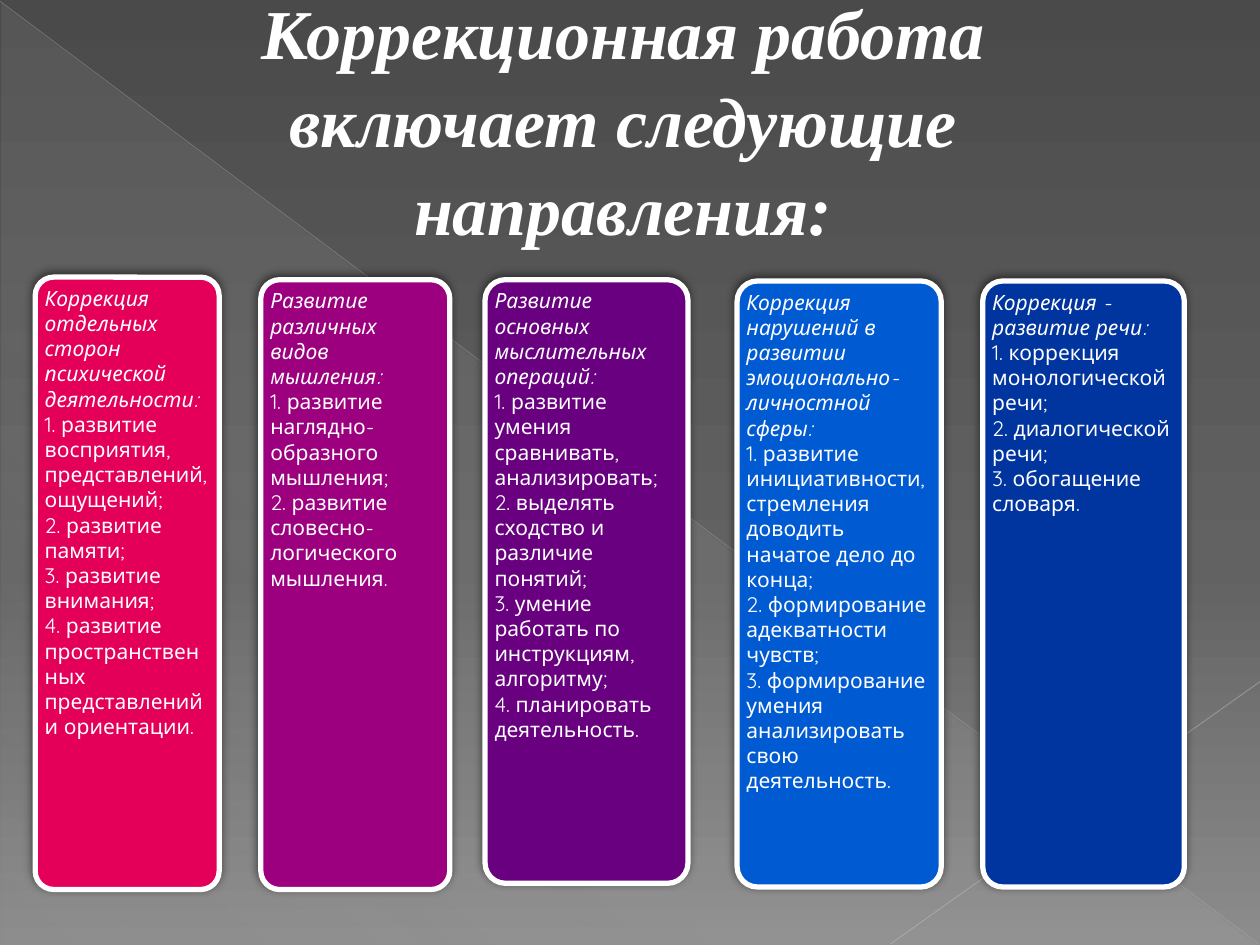
from dataclasses import dataclass

from pptx import Presentation
from pptx.dml.color import RGBColor
from pptx.enum.shapes import MSO_CONNECTOR, MSO_SHAPE
from pptx.enum.text import MSO_ANCHOR, PP_ALIGN
from pptx.oxml.ns import qn
from pptx.oxml.xmlchemy import OxmlElement
from pptx.util import Inches, Pt


@dataclass(frozen=True)
class Theme:
    text: str = "FFFFFF"
    border: str = "FFFFFF"
    shadow: str = "000000"
    background: tuple = ((0, "4A4A4A", 100), (60, "626262", 100), (100, "8C8C8C", 100))
    sheen: tuple = ((0, "D2D2D2", 10), (70, "D2D2D2", 8), (100, "D2D2D2", 1))
    falling_line: str = "BFBFBF"
    rising_line: str = "C6C6C6"
    title_font: str = "Times New Roman"
    body_font: str = "Quicksand"
    title_size: int = 40
    body_size: int = 12


CARD_INSET = 0.045

# left, top, width, height, colour, heading, items
CARDS = [
    (0.28, 2.20, 1.46, 4.86, "E40059",
     "Коррекция отдельных сторон психической деятельности:",
     ["развитие восприятия, представлений, ощущений;",
      "развитие памяти;",
      "развитие внимания;",
      "развитие пространственных представлений и ориентации."]),
    (2.07, 2.22, 1.50, 4.84, "9C007F",
     "Развитие различных видов мышления:",
     ["развитие наглядно-образного мышления;",
      "развитие словесно-логического мышления."]),
    (3.85, 2.22, 1.61, 4.79, "68007F",
     "Развитие основных мыслительных операций:",
     ["развитие умения сравнивать, анализировать;",
      "выделять сходство и различие понятий;",
      "умение работать по инструкциям, алгоритму;",
      "планировать деятельность."]),
    (5.85, 2.23, 1.62, 4.81, "005BD3",
     "Коррекция нарушений в развитии эмоционально-личностной сферы:",
     ["развитие инициативности, стремления доводить начатое дело до конца;",
      "формирование адекватности чувств;",
      "формирование умения анализировать свою деятельность."]),
    (7.80, 2.23, 1.60, 4.81, "00349E",
     "Коррекция - развитие речи:",
     ["коррекция монологической речи;",
      "диалогической речи;",
      "обогащение словаря."]),
]


def add_element(parent, tag, **attributes):
    element = OxmlElement(tag)
    for name, value in attributes.items():
        element.set(name, str(value))
    parent.append(element)
    return element


def add_alpha(color_element, percent):
    add_element(color_element, "a:alpha", val=percent * 1000)


def set_gradient(fill, owner, stops, angle):
    """Fill with (position, colour, opacity) stops; the angle runs clockwise."""
    fill.gradient()
    fill.gradient_angle = 360 - angle
    stop_list = next(owner.iter(qn("a:gsLst")))
    for old_stop in list(stop_list):
        stop_list.remove(old_stop)
    for position, color, opacity in stops:
        stop = add_element(stop_list, "a:gs", pos=position * 1000)
        add_alpha(add_element(stop, "a:srgbClr", val=color), opacity)


class SlideBuilder:
    def __init__(self, slide, theme):
        self.slide = slide
        self.theme = theme

    def background(self):
        background = self.slide.background
        set_gradient(background.fill, self.slide.element, self.theme.background, 90)

    def sheen(self, left, top, width, height):
        shape = self.slide.shapes.add_shape(
            MSO_SHAPE.RIGHT_TRIANGLE,
            Inches(left), Inches(top), Inches(width), Inches(height))
        shape.shadow.inherit = False
        shape.line.fill.background()
        set_gradient(shape.fill, shape.element.spPr, self.theme.sheen, 133)

    def line(self, start, end, color, width, opacity):
        connector = self.slide.shapes.add_connector(
            MSO_CONNECTOR.STRAIGHT, *map(Inches, start), *map(Inches, end))
        connector.line.width = Pt(width)
        connector.line.color.rgb = RGBColor.from_string(color)
        properties = connector.element.spPr
        add_alpha(next(properties.iter(qn("a:srgbClr"))), opacity)
        add_element(properties, "a:effectLst")

    def text_box(self, left, top, width, height, margins):
        box = self.slide.shapes.add_textbox(
            Inches(left), Inches(top), Inches(width), Inches(height))
        frame = box.text_frame
        frame.word_wrap = True
        (frame.margin_left, frame.margin_top,
         frame.margin_right, frame.margin_bottom) = map(Inches, margins)
        return frame

    def format_text(self, paragraph, font, size, bold=False, italic=False):
        for run in paragraph.runs:
            run.font.name = font
            run.font.size = Pt(size)
            run.font.bold = bold
            run.font.italic = italic
            run.font.color.rgb = RGBColor.from_string(self.theme.text)

    def title(self, text, left, top, width, height):
        frame = self.text_box(left, top, width, height, (0, 0.05, 0, 0))
        frame.vertical_anchor = MSO_ANCHOR.BOTTOM
        frame.text = text
        paragraph = frame.paragraphs[0]
        paragraph.alignment = PP_ALIGN.CENTER
        paragraph.line_spacing = 1.05
        self.format_text(paragraph, self.theme.title_font, self.theme.title_size,
                         bold=True, italic=True)

    def panel(self, left, top, width, height, color):
        shape = self.slide.shapes.add_shape(
            MSO_SHAPE.ROUNDED_RECTANGLE,
            Inches(left), Inches(top), Inches(width), Inches(height))
        shape.adjustments[0] = 0.1
        shape.fill.solid()
        shape.fill.fore_color.rgb = RGBColor.from_string(color)
        shape.line.color.rgb = RGBColor.from_string(self.theme.border)
        shape.line.width = Pt(3)
        shape.shadow.inherit = False
        effects = shape.element.spPr.find(qn("a:effectLst"))
        shadow = add_element(effects, "a:outerShdw", blurRad=Pt(5), dist=Pt(2),
                             dir=245 * 60000, rotWithShape=0)
        add_alpha(add_element(shadow, "a:srgbClr", val=self.theme.shadow), 50)

    def card(self, left, top, width, height, color, heading, items):
        self.panel(left, top, width, height, color)
        frame = self.text_box(
            left + CARD_INSET, top + CARD_INSET,
            width - 2 * CARD_INSET, height - 2 * CARD_INSET,
            (0.03, 0.02, 0.03, 0.02))
        numbered = [f"{number}. {item}" for number, item in enumerate(items, 1)]
        frame.text = "\n".join([heading, *numbered])
        for index, paragraph in enumerate(frame.paragraphs):
            self.format_text(paragraph, self.theme.body_font, self.theme.body_size,
                             italic=index == 0)


def main():
    presentation = Presentation()
    presentation.slide_width = Inches(10)
    presentation.slide_height = Inches(7.5)
    theme = Theme()
    builder = SlideBuilder(
        presentation.slides.add_slide(presentation.slide_layouts[6]), theme)

    builder.background()
    builder.sheen(0.01, 0.02, 9.98, 7.48)
    builder.line((0, 0.01), (9.99, 7.49), theme.falling_line, 0.39, 35)
    builder.line((10, 5.41), (7.07, 7.49), theme.rising_line, 0.47, 45)
    builder.title("Коррекционная работа включает следующие направления:",
                  0.91, 1.07, 8.07, 0.91)
    for card in CARDS:
        builder.card(*card)

    presentation.save("out.pptx")


if __name__ == "__main__":
    main()
